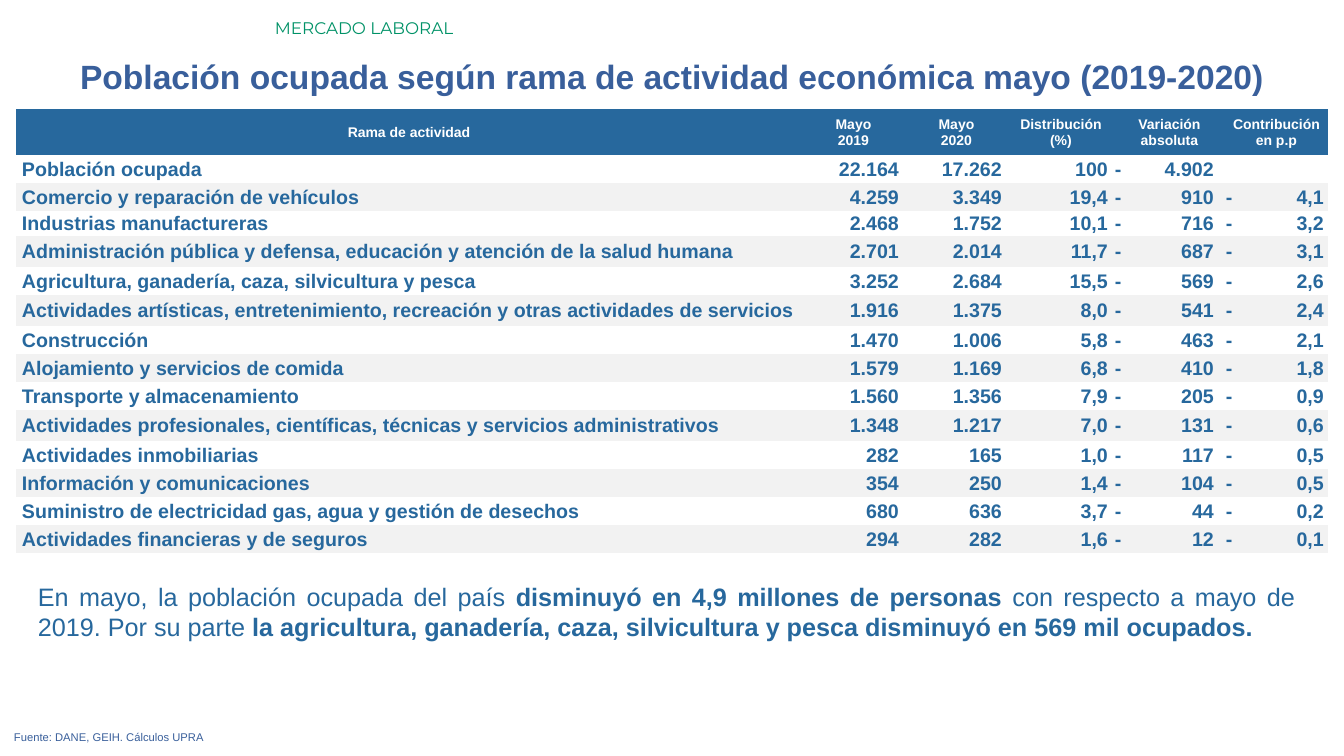
from lxml import etree
from pptx import Presentation
from pptx.dml.color import RGBColor
from pptx.enum.text import MSO_ANCHOR, PP_ALIGN
from pptx.oxml.ns import qn
from pptx.util import Emu, Pt

LEFT, CENTER, RIGHT, JUSTIFY = PP_ALIGN.LEFT, PP_ALIGN.CENTER, PP_ALIGN.RIGHT, PP_ALIGN.JUSTIFY
MIDDLE = MSO_ANCHOR.MIDDLE
COLORS = {"green": "009267", "title": "395F9B", "blue": "27689D",
          "band": "F2F2F2", "white": "FFFFFF"}
NO_STYLE = "{2D5ABB26-0587-4C30-8999-92F81FD0307C}"
COL_WIDTHS = [786, 103, 103, 106, 111, 103]
COL_ALIGNS = [LEFT, RIGHT, RIGHT, RIGHT, LEFT, LEFT]
COL_TABS = [0, 0, 0, 0, 99, 98]
HEADER_HEIGHT, ROW_HEIGHT = 46, 28
SPECIAL_HEIGHTS = {3: 25, 4: 31, 6: 31, 10: 31}
HEADERS = ["Rama de actividad", "Mayo\n2019", "Mayo\n2020", "Distribución\n(%)",
           "Variación\nabsoluta", "Contribución\nen p.p"]
ROWS = [
    ("Población ocupada", "22.164", "17.262", "100", "4.902", ""),
    ("Comercio y reparación de vehículos", "4.259", "3.349", "19,4", "910", "4,1"),
    ("Industrias manufactureras", "2.468", "1.752", "10,1", "716", "3,2"),
    ("Administración pública y defensa, educación y atención de la salud humana",
     "2.701", "2.014", "11,7", "687", "3,1"),
    ("Agricultura, ganadería, caza, silvicultura y pesca",
     "3.252", "2.684", "15,5", "569", "2,6"),
    ("Actividades artísticas, entretenimiento, recreación y otras actividades de servicios",
     "1.916", "1.375", "8,0", "541", "2,4"),
    ("Construcción", "1.470", "1.006", "5,8", "463", "2,1"),
    ("Alojamiento y servicios de comida", "1.579", "1.169", "6,8", "410", "1,8"),
    ("Transporte y almacenamiento", "1.560", "1.356", "7,9", "205", "0,9"),
    ("Actividades profesionales, científicas, técnicas y servicios administrativos",
     "1.348", "1.217", "7,0", "131", "0,6"),
    ("Actividades inmobiliarias", "282", "165", "1,0", "117", "0,5"),
    ("Información y comunicaciones", "354", "250", "1,4", "104", "0,5"),
    ("Suministro de electricidad gas, agua y gestión de desechos",
     "680", "636", "3,7", "44", "0,2"),
    ("Actividades financieras y de seguros", "294", "282", "1,6", "12", "0,1"),
]
SUMMARY = [
    ("En mayo, la población ocupada del país ", False),
    ("disminuyó en 4,9 millones de personas ", True),
    ("con respecto a mayo de 2019. Por su parte ", False),
    ("la agricultura, ganadería, caza, silvicultura y pesca disminuyó en 569 mil ocupados.", True),
]


def px(n):
    return Emu(round(n * 914400 / 100.8))


def color(name):
    return RGBColor.from_string(COLORS[name])


def style(p, size, name, align=LEFT, bold=None, font="Arial"):
    p.alignment = align
    p.font.size = Pt(size)
    p.font.name = font
    p.font.color.rgb = color(name)
    p.font.bold = bold


def add_title(s, text, x, y, w, h):
    sp = s.shapes.title
    sp.left, sp.top, sp.width, sp.height = map(px, (x, y, w, h))
    sp.text_frame.text = text
    style(sp.text_frame.paragraphs[0], 24, "title", CENTER, True)


def add_text(s, parts, x, y, w, h, *look, **extra):
    tf = s.shapes.add_textbox(*map(px, (x, y, w, h))).text_frame
    tf.word_wrap = True
    p = tf.paragraphs[0]
    for text, bold in parts:
        r = p.add_run()
        r.text = text
        if bold:
            r.font.bold = True
    style(p, *look, **extra)


def add_right_tab(p, position):
    tabs = etree.SubElement(p._p.get_or_add_pPr(), qn("a:tabLst"))
    etree.SubElement(tabs, qn("a:tab"), pos=str(px(position)), algn="r")


def fill_cell(cell, text, size, name, align, fill=None, tab=0, side=1):
    cell.vertical_anchor = MIDDLE
    cell.margin_left = cell.margin_right = px(side)
    cell.margin_top, cell.margin_bottom = px(1), 0
    if fill:
        cell.fill.solid()
        cell.fill.fore_color.rgb = color(fill)
    else:
        cell.fill.background()
    cell.text = text
    for p in cell.text_frame.paragraphs:
        if tab:
            add_right_tab(p, tab)
        style(p, size, name, align, True)


def add_activity_table(s, x, y):
    heights = [HEADER_HEIGHT] + [SPECIAL_HEIGHTS.get(i, ROW_HEIGHT)
                                 for i in range(1, len(ROWS) + 1)]
    table = s.shapes.add_table(len(heights), len(COL_WIDTHS), px(x), px(y),
                               px(sum(COL_WIDTHS)), px(sum(heights))).table
    table._tbl.tblPr.find(qn("a:tableStyleId")).text = NO_STYLE
    table.first_row = table.horz_banding = False
    for column, width in zip(table.columns, COL_WIDTHS):
        column.width = px(width)
    for row, height in zip(table.rows, heights):
        row.height = px(height)
    for c, text in enumerate(HEADERS):
        fill_cell(table.cell(0, c), text, 10, "white", CENTER, "blue")
    for i, values in enumerate(ROWS, 1):
        band = None if i % 2 else "band"
        for c, (text, align, tab) in enumerate(zip(values, COL_ALIGNS, COL_TABS)):
            if tab and text:
                text = "-\t" + text
            fill_cell(table.cell(i, c), text, 14, "blue", align, band, tab,
                      1 if tab else 6)


def main():
    prs = Presentation()
    prs.slide_width, prs.slide_height = px(1344), px(756)
    s = prs.slides.add_slide(prs.slide_layouts[5])
    add_text(s, [("MERCADO LABORAL", False)], 265, 13, 1079, 30, 12, "green",
             font="Montserrat")
    add_title(s, "Población ocupada según rama de actividad económica mayo (2019-2020)",
              0, 51, 1344, 50)
    add_text(s, SUMMARY, 28, 576, 1277, 72, 18, "blue", JUSTIFY)
    add_text(s, [("Fuente: DANE, GEIH. Cálculos UPRA", False)], 4, 725, 1301, 24,
             8, "title", JUSTIFY)
    add_activity_table(s, 16, 109)
    prs.save("out.pptx")


if __name__ == "__main__":
    main()
